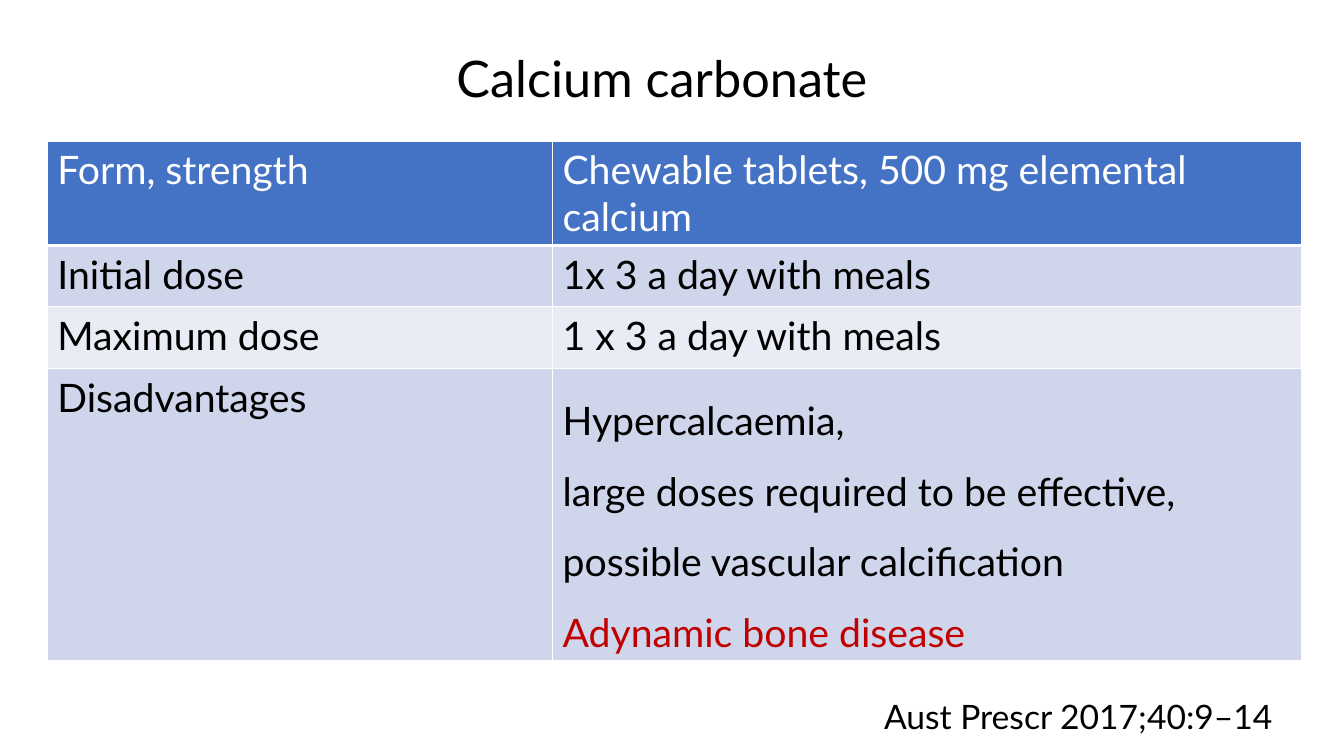
from pptx import Presentation
from pptx.dml.color import RGBColor
from pptx.enum.text import MSO_ANCHOR, MSO_AUTO_SIZE, PP_ALIGN
from pptx.oxml import parse_xml
from pptx.oxml.ns import nsdecls
from pptx.util import Inches, Pt


def style(p, size, color, spacing=1.0):
    p.line_spacing = spacing
    for r in p.runs:
        r.font.name = "Lato"
        r.font.size = Pt(size)
        r.font.bold = False
        r.font.color.rgb = RGBColor.from_string(color)


def add_border(cell, side, points):
    cell._tc.get_or_add_tcPr().append(parse_xml(
        f'<a:{side} {nsdecls("a")} w="{Pt(points)}"><a:solidFill>'
        f'<a:srgbClr val="FFFFFF"/></a:solidFill></a:{side}>'))


prs = Presentation()
prs.slide_width = Inches(13.33)
prs.slide_height = Inches(7.5)
s = prs.slides.add_slide(prs.slide_layouts[5])

title = s.shapes.title
title.left, title.top = Inches(-0.1), Inches(0.12)
title.width, title.height = Inches(13.33), Inches(0.93)
tf = title.text_frame
tf.text = "Calcium carbonate"
tf.auto_size = MSO_AUTO_SIZE.NONE
tf.vertical_anchor = MSO_ANCHOR.TOP
tf.paragraphs[0].alignment = PP_ALIGN.CENTER
style(tf.paragraphs[0], 36, "000000", 1.5)

source = s.shapes.add_textbox(Inches(8.67), Inches(6.85), Inches(4.24), Inches(0.5))
tf = source.text_frame
tf.word_wrap = True
tf.text = "Aust Prescr 2017;40:9–14"
style(tf.paragraphs[0], 24, "000000")

rows = [
    ("Form, strength", "Chewable tablets, 500 mg elemental calcium"),
    ("Initial dose", "1x 3 a day with meals"),
    ("Maximum dose", "1 x 3 a day with meals"),
    ("Disadvantages", "Hypercalcaemia,\nlarge doses required to be effective,\n"
     "possible vascular calcification\nAdynamic bone disease"),
]
fills = ["4472C4", "CFD5EA", "E9EBF5", "CFD5EA"]
heights = [1.03, 0.61, 0.61, 2.9]
table = s.shapes.add_table(4, 2, Inches(0.47), Inches(1.4),
                           Inches(12.44), Inches(sum(heights))).table
table.columns[0].width = Inches(5.01)
table.columns[1].width = Inches(7.43)

for i, texts in enumerate(rows):
    table.rows[i].height = Inches(heights[i])
    for j, text in enumerate(texts):
        cell = table.cell(i, j)
        cell.text = text
        for side in ("lnL", "lnR", "lnT", "lnB"):
            header_line = (i, side) in ((0, "lnB"), (1, "lnT"))
            add_border(cell, side, 3 if header_line else 1)
        cell.fill.solid()
        cell.fill.fore_color.rgb = RGBColor.from_string(fills[i])
        paragraphs = cell.text_frame.paragraphs
        for p in paragraphs:
            style(p, 28, "000000" if i else "FFFFFF", 1.5 if len(paragraphs) > 1 else 1.0)

style(table.cell(3, 1).text_frame.paragraphs[-1], 28, "C00000", 1.5)

prs.save("out.pptx")
